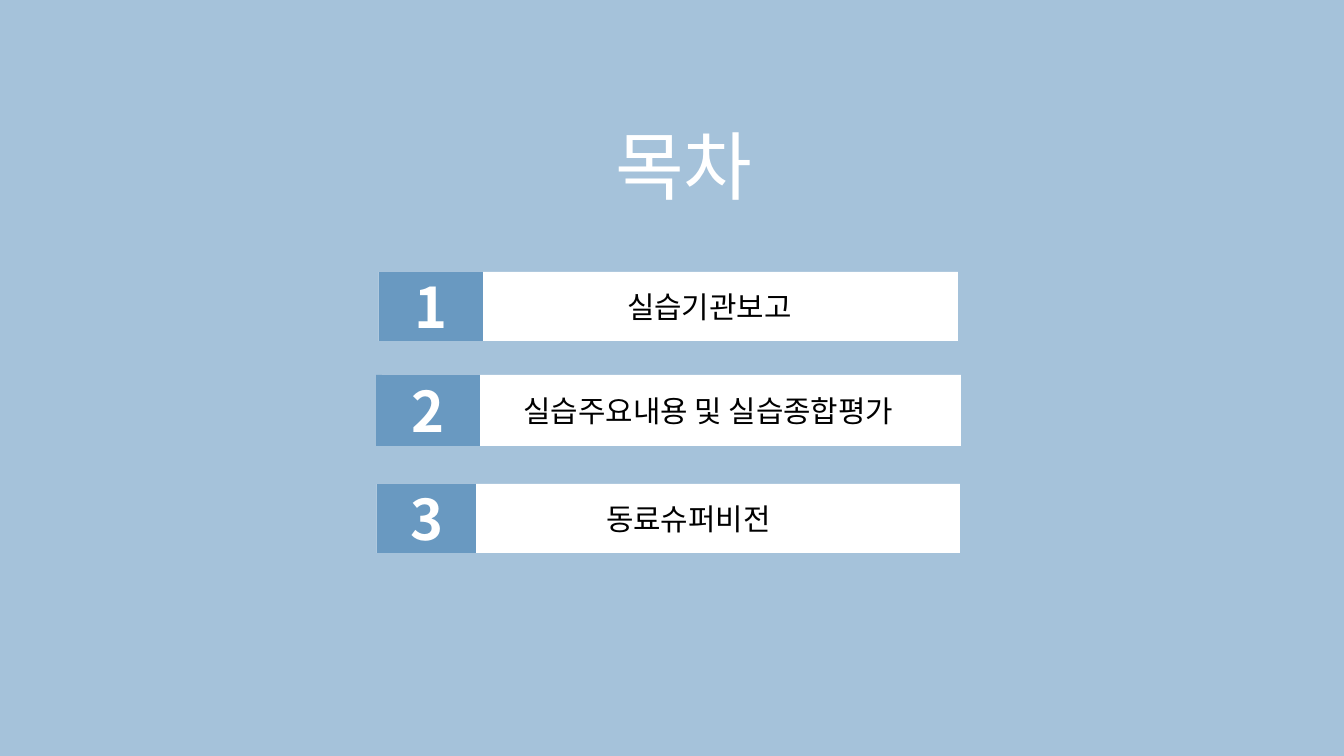
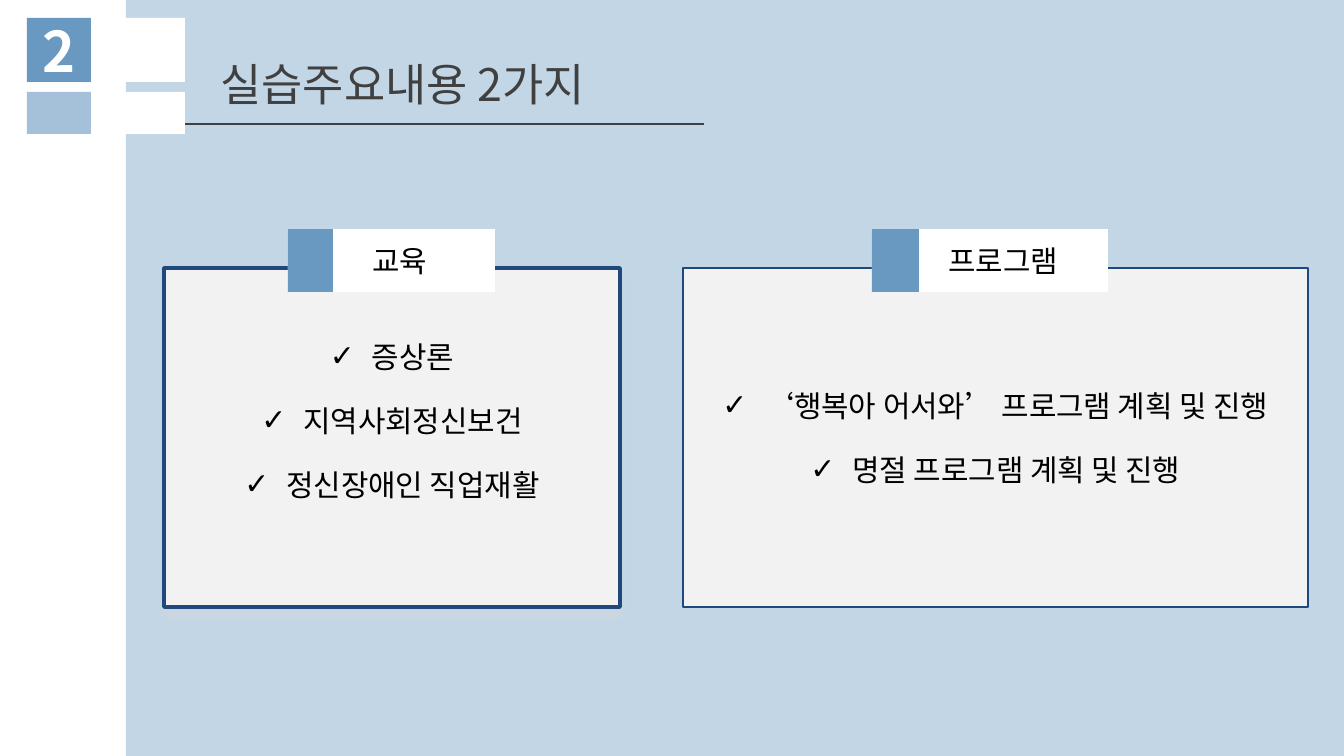
from dataclasses import dataclass

from lxml.etree import SubElement as Sub
from pptx import Presentation
from pptx.dml.color import RGBColor
from pptx.enum.shapes import MSO_CONNECTOR as Link, MSO_SHAPE as Form
from pptx.enum.text import MSO_ANCHOR as Anchor, MSO_AUTO_SIZE as Fit, PP_ALIGN as Align
from pptx.oxml.ns import qn
from pptx.util import Emu, Inches, Pt

WIDE, HIGH = 1344, 756
SCALE = Inches(10) / WIDE
FONT = "Noto Sans CJK KR"
BLUE, PALE, NAVY = "6999C1", "A5C2DA", "1F497D"
WHITE, BLACK, GRAY, DARK = "FFFFFF", "000000", "F2F2F2", "404040"
PAD = 13
HANG = 42


@dataclass
class Band:
    """White strip with a coloured tag at its left end."""
    x: int
    y: int
    w: int
    h: int
    cut: int
    text: str = ""
    label: str = ""
    inset: int = 0
    shift: int = 0
    alpha: int = 100


@dataclass
class Panel:
    x: int
    w: int
    line: float
    items: list[str]
    lift: int = 0
    shade: bool = False


ROWS = [
    Band(379, 272, 579, 69, 104, "실습기관보고", "1", inset=82),
    Band(382, 375, 579, 71, 104, "실습주요내용 및 실습종합평가", "2", inset=74, shift=-6),
    Band(377, 484, 583, 69, 99, "동료슈퍼비전", "3", inset=40),
]
MARKS = [
    Band(27, 18, 158, 64, 64, label="2"),
    Band(27, 92, 158, 42, 64, alpha=60),
]
CHIPS = [
    Band(288, 229, 207, 63, 45, "교육", inset=17),
    Band(872, 229, 236, 63, 47, "프로그램", inset=27),
]
PANELS = [
    Panel(164, 456, 2, ["증상론", "지역사회정신보건", "정신장애인 직업재활"], lift=34, shade=True),
    Panel(683, 625, 1.5, ["‘행복아 어서와’ 프로그램 계획 및 진행", "명절 프로그램 계획 및 진행"]),
]


def px(n: float) -> Emu:
    return Emu(round(n * SCALE))


def rgb(code: str) -> RGBColor:
    return RGBColor.from_string(code)


def paint(fill, code: str, alpha: int = 100) -> None:
    fill.solid()
    fill.fore_color.rgb = rgb(code)
    if alpha < 100:
        tint = fill._xPr.find(qn("a:solidFill"))[0]
        Sub(tint, qn("a:alpha"), val=str(alpha * 1000))


def place(shape, x: int, y: int, w: int, h: int) -> None:
    shape.left, shape.top, shape.width, shape.height = map(px, (x, y, w, h))


def style(para, size: int, code: str, align=Align.CENTER, bold: bool = False) -> None:
    para.alignment = align
    for run in para.runs:
        font = run.font
        font.size, font.bold, font.name = Pt(size), bold, FONT
        font.color.rgb = rgb(code)
        Sub(font._element, qn("a:ea"), typeface=FONT)


def box(shapes, x: int, y: int, w: int, h: int, code: str, alpha: int = 100):
    rect = shapes.add_shape(Form.RECTANGLE, px(x), px(y), px(w), px(h))
    rect.shadow.inherit = False
    rect.line.fill.background()
    paint(rect.fill, code, alpha)
    return rect


def label(shape, text: str, size: int, code: str, inset: int = 0, bold: bool = False) -> None:
    frame = shape.text_frame
    frame.text = text
    frame.vertical_anchor = Anchor.MIDDLE
    frame.margin_left, frame.margin_right = px(PAD + inset), px(PAD)
    frame.margin_top = frame.margin_bottom = 0
    style(frame.paragraphs[0], size, code, bold=bold)


def draw_band(slide, band: Band) -> None:
    parts = slide.shapes.add_group_shape().shapes
    strip = box(parts, band.x, band.y, band.w, band.h, WHITE)
    tag = box(parts, band.x + band.shift, band.y, band.cut, band.h, BLUE, band.alpha)
    if band.text:
        label(strip, band.text, 16, BLACK, band.inset)
    if band.label:
        label(tag, band.label, 30, WHITE, bold=True)


def title(slide, text: str, area: tuple, size: int, code: str, align) -> None:
    head = slide.shapes.title
    place(head, *area)
    frame = head.text_frame
    frame.text = text
    frame.auto_size = Fit.NONE
    frame.vertical_anchor = Anchor.TOP
    style(frame.paragraphs[0], size, code, align)


def shade(shape) -> None:
    """Add a soft grey shadow below the shape."""
    fx = Sub(shape._element.spPr, qn("a:effectLst"))
    drop = Sub(fx, qn("a:outerShdw"), blurRad=str(Pt(4)), dist=str(Pt(4)), dir="5400000")
    tint = Sub(drop, qn("a:srgbClr"), val="D9D9D9")
    Sub(tint, qn("a:alpha"), val="43000")


def check(para) -> None:
    """Give the paragraph a hanging tick bullet."""
    props = para._p.get_or_add_pPr()
    props.set("marL", str(px(HANG)))
    props.set("indent", str(-px(HANG)))
    Sub(props, qn("a:buChar"), char="✓")


def draw_panel(body, panel: Panel) -> None:
    place(body, panel.x, 268, panel.w, 339)
    paint(body.fill, GRAY)
    paint(body.line.fill, NAVY)
    body.line.width = Pt(panel.line)
    if panel.shade:
        shade(body)
    frame = body.text_frame
    frame.text = "\n".join(panel.items)
    frame.auto_size = Fit.NONE
    frame.vertical_anchor = Anchor.MIDDLE
    frame.margin_bottom = px(7 + panel.lift)
    for i, para in enumerate(frame.paragraphs):
        style(para, 16, BLACK)
        para.space_before = Pt(15 if i else 0)
        check(para)


def agenda(deck) -> None:
    slide = deck.slides.add_slide(deck.slide_layouts[5])
    paint(slide.background.fill, PALE)
    title(slide, "목차", (536, 113, 296, 104), 40, WHITE, Align.CENTER)
    for row in ROWS:
        draw_band(slide, row)


def content(deck) -> None:
    slide = deck.slides.add_slide(deck.slide_layouts[3])
    shapes = slide.shapes
    paint(slide.background.fill, WHITE)
    back = box(shapes, 126, 0, WIDE - 126, HIGH, BLUE, 40)
    shapes._spTree.insert(2, back._element)
    for mark in MARKS:
        draw_band(slide, mark)
    rule = shapes.add_connector(Link.STRAIGHT, px(185), px(124), px(704), px(124))
    paint(rule.line.fill, DARK)
    rule.line.width = Pt(0.75)
    Sub(rule._element.spPr, qn("a:effectLst"))
    title(slide, "실습주요내용 2가지", (207, 50, 773, 70), 24, DARK, Align.LEFT)
    for i, panel in enumerate(PANELS, 1):
        draw_panel(slide.placeholders[i], panel)
    for chip in CHIPS:
        draw_band(slide, chip)


def main() -> None:
    deck = Presentation()
    deck.slide_width, deck.slide_height = px(WIDE), px(HIGH)
    agenda(deck)
    content(deck)
    deck.save("out.pptx")


if __name__ == "__main__":
    main()
